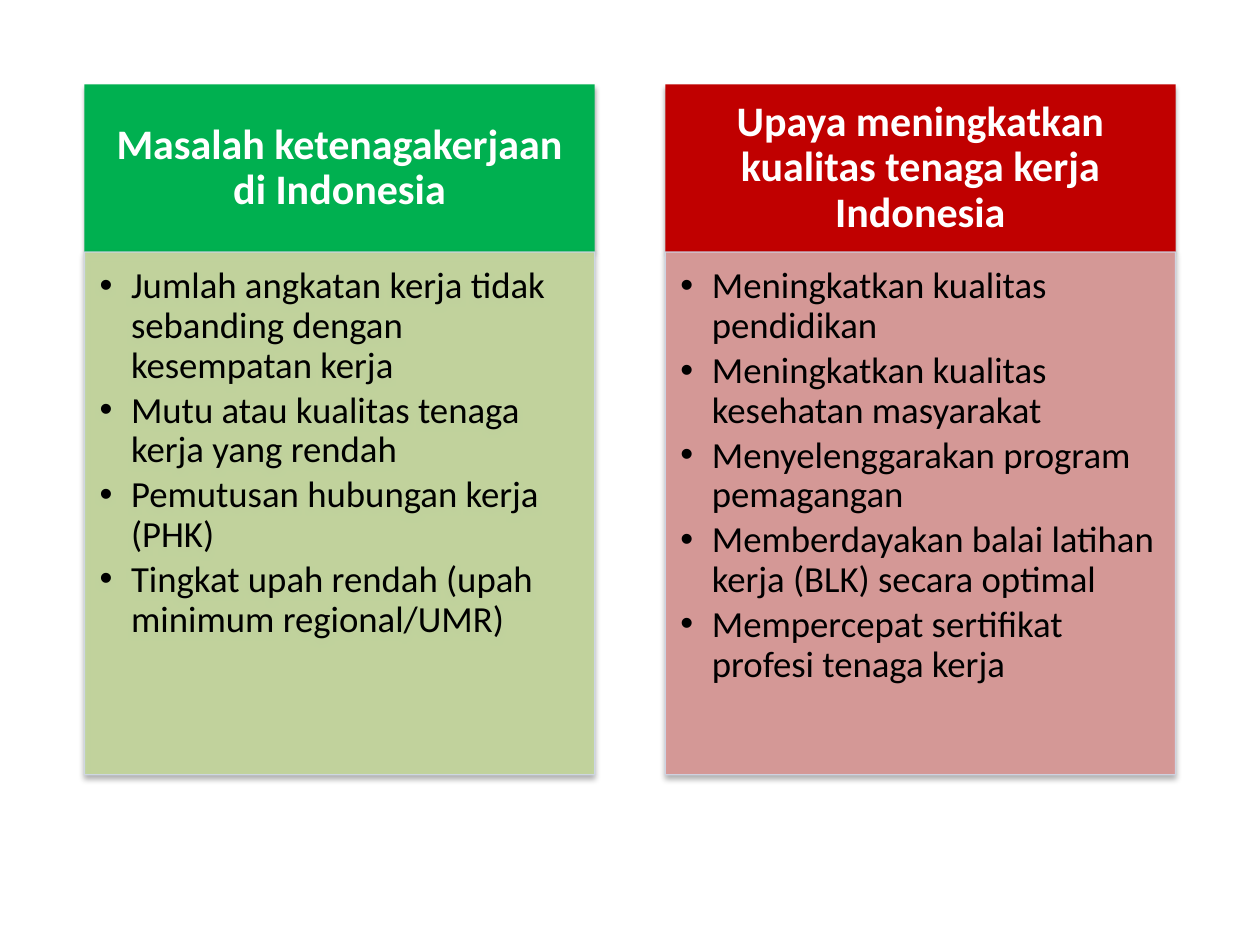
from dataclasses import dataclass

from lxml import etree
from pptx import Presentation
from pptx.dml.color import RGBColor
from pptx.enum.text import MSO_ANCHOR, MSO_AUTO_SIZE, PP_ALIGN
from pptx.oxml.ns import qn
from pptx.util import Inches, Pt

MIDDLE, TOP = MSO_ANCHOR.MIDDLE, MSO_ANCHOR.TOP
CENTER, LEFT = PP_ALIGN.CENTER, PP_ALIGN.LEFT
NO_AUTOFIT = MSO_AUTO_SIZE.NONE
COMPARISON_LAYOUT = 4


@dataclass(frozen=True)
class Theme:
    font: str = "Calibri"
    heading_size: int = 24
    list_size: int = 21
    heading_text: str = "FFFFFF"
    list_text: str = "000000"
    green: str = "00B050"
    pale_green: str = "C3D69B"
    red: str = "C00000"
    pale_red: str = "D99694"
    border: str = "D0D8E8"
    shadow: str = "000000"
    line_spacing: float = 0.9
    list_gap: int = 3


COLUMN_LEFT, COLUMN_STEP, COLUMN_WIDTH = 0.67, 4.61, 4.05
HEADING_TOP, HEADING_HEIGHT = 0.67, 1.33
LIST_TOP, LIST_HEIGHT = HEADING_TOP + HEADING_HEIGHT, 4.15
HEADING_INSETS = (0.19, 0.11, 0.19, 0.11)
LIST_INSETS = (0.12, 0.12, 0.16, 0.18)
INDENT = 0.25


def add_alpha(parent, percent):
    color = parent.find(".//" + qn("a:srgbClr"))
    etree.SubElement(color, qn("a:alpha"), val=str(percent * 1000))


class ComparisonSlide:
    def __init__(self, slide, theme):
        self.slide = slide
        self.theme = theme

    def panel(self, index, box, fill, insets, anchor):
        shape = self.slide.placeholders[index]
        shape.left, shape.top, shape.width, shape.height = map(Inches, box)
        shape.fill.solid()
        shape.fill.fore_color.rgb = RGBColor.from_string(fill)
        shape.line.fill.background()
        self.add_shadow(shape)
        frame = shape.text_frame
        frame.word_wrap = True
        frame.auto_size = NO_AUTOFIT
        frame.vertical_anchor = anchor
        (frame.margin_left, frame.margin_top,
         frame.margin_right, frame.margin_bottom) = map(Inches, insets)
        return shape

    def add_shadow(self, shape):
        properties = shape.element.spPr
        effects = properties.find(qn("a:effectLst"))
        if effects is None:
            effects = etree.SubElement(properties, qn("a:effectLst"))
        shadow = etree.SubElement(
            effects, qn("a:outerShdw"), blurRad=str(Pt(3.1)),
            dist=str(Pt(1.8)), dir="5400000", rotWithShape="0")
        etree.SubElement(shadow, qn("a:srgbClr"), val=self.theme.shadow)
        add_alpha(shadow, 35)

    def format_paragraph(self, paragraph, alignment, space_after):
        paragraph.alignment = alignment
        paragraph.line_spacing = self.theme.line_spacing
        paragraph.space_before = Pt(0)
        paragraph.space_after = Pt(space_after)

    def add_run(self, paragraph, text, size, color, bold):
        run = paragraph.add_run()
        run.text = text
        run.font.name = self.theme.font
        run.font.size = Pt(size)
        run.font.bold = bold
        run.font.color.rgb = RGBColor.from_string(color)

    def heading(self, index, left, lines, fill):
        box = (left, HEADING_TOP, COLUMN_WIDTH, HEADING_HEIGHT)
        shape = self.panel(index, box, fill, HEADING_INSETS, MIDDLE)
        paragraph = shape.text_frame.paragraphs[0]
        self.format_paragraph(paragraph, CENTER, 0)
        for number, line in enumerate(lines):
            if number:
                paragraph.add_line_break()
            self.add_run(paragraph, line, self.theme.heading_size,
                         self.theme.heading_text, True)

    def bullet_list(self, index, left, items, fill):
        box = (left, LIST_TOP, COLUMN_WIDTH, LIST_HEIGHT)
        shape = self.panel(index, box, fill, LIST_INSETS, TOP)
        add_alpha(shape.element.spPr.find(qn("a:solidFill")), 90)
        shape.line.color.rgb = RGBColor.from_string(self.theme.border)
        shape.line.width = Pt(0.75)
        add_alpha(shape.element.spPr.find(qn("a:ln")), 90)
        frame = shape.text_frame
        for number, item in enumerate(items):
            paragraph = frame.add_paragraph() if number else frame.paragraphs[0]
            self.format_paragraph(paragraph, LEFT, self.theme.list_gap)
            properties = paragraph._p.get_or_add_pPr()
            properties.set("marL", str(Inches(INDENT)))
            properties.set("indent", str(-Inches(INDENT)))
            etree.SubElement(properties, qn("a:buChar"), char="•")
            self.add_run(paragraph, item, self.theme.list_size,
                         self.theme.list_text, False)

    def remove_title(self):
        title = self.slide.shapes.title.element
        title.getparent().remove(title)


def main():
    presentation = Presentation()
    presentation.slide_width = Inches(10)
    presentation.slide_height = Inches(7.5)
    layout = presentation.slide_layouts[COMPARISON_LAYOUT]
    theme = Theme()
    comparison = ComparisonSlide(presentation.slides.add_slide(layout), theme)
    comparison.remove_title()

    columns = [
        (["Masalah ketenagakerjaan", "di Indonesia"],
         ["Jumlah angkatan kerja tidak sebanding dengan kesempatan kerja",
          "Mutu atau kualitas tenaga kerja yang rendah",
          "Pemutusan hubungan kerja (PHK)",
          "Tingkat upah rendah (upah minimum regional/UMR)"],
         theme.green, theme.pale_green),
        (["Upaya meningkatkan kualitas tenaga kerja Indonesia"],
         ["Meningkatkan kualitas pendidikan",
          "Meningkatkan kualitas kesehatan masyarakat",
          "Menyelenggarakan program pemagangan",
          "Memberdayakan balai latihan kerja (BLK) secara optimal",
          "Mempercepat sertifikat profesi tenaga kerja"],
         theme.red, theme.pale_red),
    ]
    for number, (lines, items, strong, pale) in enumerate(columns):
        left = COLUMN_LEFT + number * COLUMN_STEP
        comparison.heading(2 * number + 1, left, lines, strong)
        comparison.bullet_list(2 * number + 2, left, items, pale)

    presentation.save("out.pptx")


if __name__ == "__main__":
    main()
